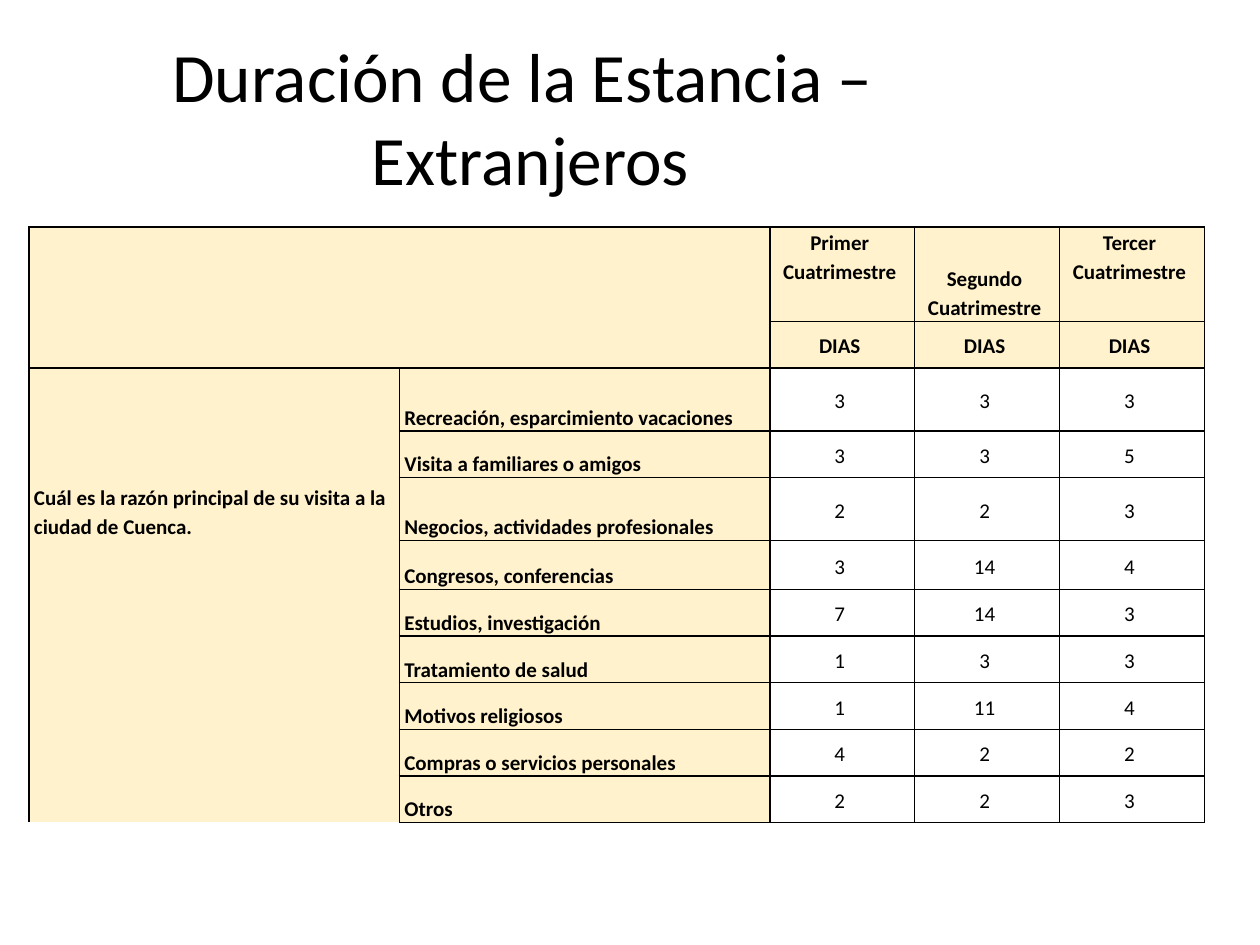
"""Build the slide on length of stay of foreign visitors."""
from dataclasses import dataclass

from lxml.etree import SubElement
from pptx import Presentation
from pptx.dml.color import RGBColor
from pptx.enum.text import MSO_ANCHOR as Anchor, PP_ALIGN as Align
from pptx.oxml.ns import qn
from pptx.util import Inches, Pt


@dataclass(frozen=True)
class Theme:
    font: str = "Calibri"
    ink: RGBColor = RGBColor(0, 0, 0)
    header: RGBColor = RGBColor(0xFF, 0xF2, 0xCC)
    title_pt: float = 39.6
    cell_pt: float = 12
    border_pt: float = 1


@dataclass(frozen=True)
class Reason:
    label: str
    days: tuple[int, int, int]
    height: float = 0.37


THEME = Theme()
TITLE = ("Duración de la Estancia – ", "Extranjeros")
QUESTION = "Cuál es la razón principal de su visita a la ciudad de Cuenca."
PERIODS = (
    ("Primer Cuatrimestre", Anchor.TOP),
    ("Segundo Cuatrimestre", Anchor.BOTTOM),
    ("Tercer Cuatrimestre", Anchor.TOP),
)
REASONS = (
    Reason("Recreación, esparcimiento vacaciones", (3, 3, 3), 0.5),
    Reason("Visita a familiares o amigos", (3, 3, 5)),
    Reason("Negocios, actividades profesionales", (2, 2, 3), 0.5),
    Reason("Congresos, conferencias", (3, 14, 4), 0.39),
    Reason("Estudios, investigación", (7, 14, 3)),
    Reason("Tratamiento de salud", (1, 3, 3)),
    Reason("Motivos religiosos", (1, 11, 4)),
    Reason("Compras o servicios personales", (4, 2, 2)),
    Reason("Otros", (2, 2, 3)),
)
COLS = (2.94, 2.94, 1.15, 1.15, 1.15)
ROWS = (0.75, 0.37, *(reason.height for reason in REASONS))
HEADER_ROWS, LABEL_COLS, SPLIT_ROW = 2, 2, 5


def add_run(p, text: str, size: float, bold: bool = False) -> None:
    r = p.add_run()
    r.text = text
    r.font.name = THEME.font
    r.font.size = Pt(size)
    r.font.bold = bold
    r.font.color.rgb = THEME.ink


def add_title(slide) -> None:
    sp = slide.shapes.add_textbox(Inches(-0.29), Inches(0.3), Inches(9), Inches(1.25))
    tf = sp.text_frame
    tf.word_wrap = True
    tf.vertical_anchor = Anchor.MIDDLE
    p = tf.paragraphs[0]
    p.alignment = Align.CENTER
    first, second = TITLE
    add_run(p, first, THEME.title_pt)
    p.add_line_break()
    add_run(p, second, THEME.title_pt)


def set_borders(cell, hidden: str = "") -> None:
    tc_pr = cell._tc.get_or_add_tcPr()
    for i, side in enumerate("LRTB"):
        ln = SubElement(tc_pr, qn(f"a:ln{side}"), w=str(Pt(THEME.border_pt)))
        if side in hidden:
            SubElement(ln, qn("a:noFill"))
        else:
            fill = SubElement(ln, qn("a:solidFill"))
            SubElement(fill, qn("a:srgbClr"), val=str(THEME.ink))
        tc_pr.insert(i, ln)


def style_cell(cell, shaded: bool, hidden: str = "") -> None:
    cell.margin_left, cell.margin_right = Inches(0.04), Inches(0.08)
    cell.margin_top = cell.margin_bottom = 0
    if shaded:
        cell.fill.solid()
        cell.fill.fore_color.rgb = THEME.header
    else:
        cell.fill.background()
    set_borders(cell, hidden)


def write_cell(cell, text: str, anchor: Anchor, align: Align, bold: bool = True) -> None:
    cell.vertical_anchor = anchor
    p = cell.text_frame.paragraphs[0]
    p.alignment = align
    p.line_spacing = 1.15
    add_run(p, text, THEME.cell_pt, bold)


def hidden_sides(row: int, col: int) -> str:
    if col > 0 or row < HEADER_ROWS:
        return ""
    top = "T" if row > HEADER_ROWS else ""
    bottom = "B" if row < len(ROWS) - 1 else ""
    return top + bottom


def add_stay_table(slide) -> None:
    frame = slide.shapes.add_table(
        len(ROWS), len(COLS), Inches(0.23), Inches(1.8), Inches(sum(COLS)), Inches(sum(ROWS))
    )
    table = frame.table
    table.first_row = table.horz_banding = False
    for column, width in zip(table.columns, COLS):
        column.width = Inches(width)
    for row, height in zip(table.rows, ROWS):
        row.height = Inches(height)

    for row in range(len(ROWS)):
        for col in range(len(COLS)):
            shaded = row < HEADER_ROWS or col < LABEL_COLS
            style_cell(table.cell(row, col), shaded, hidden_sides(row, col))
    table.cell(0, 0).merge(table.cell(HEADER_ROWS - 1, LABEL_COLS - 1))
    table.cell(HEADER_ROWS, 0).merge(table.cell(SPLIT_ROW - 1, 0))
    table.cell(SPLIT_ROW, 0).merge(table.cell(len(ROWS) - 1, 0))

    for col, (period, anchor) in enumerate(PERIODS, LABEL_COLS):
        write_cell(table.cell(0, col), period, anchor, Align.CENTER)
        write_cell(table.cell(1, col), "DIAS", Anchor.MIDDLE, Align.CENTER)
    write_cell(table.cell(HEADER_ROWS, 0), QUESTION, Anchor.BOTTOM, Align.LEFT)
    for row, reason in enumerate(REASONS, HEADER_ROWS):
        write_cell(table.cell(row, 1), reason.label, Anchor.BOTTOM, Align.LEFT)
        for col, days in enumerate(reason.days, LABEL_COLS):
            write_cell(table.cell(row, col), str(days), Anchor.MIDDLE, Align.CENTER, bold=False)


def main() -> None:
    prs = Presentation()
    prs.slide_width, prs.slide_height = Inches(10), Inches(7.5)
    slide = prs.slides.add_slide(prs.slide_layouts[6])
    add_title(slide)
    add_stay_table(slide)
    prs.save("out.pptx")


if __name__ == "__main__":
    main()
